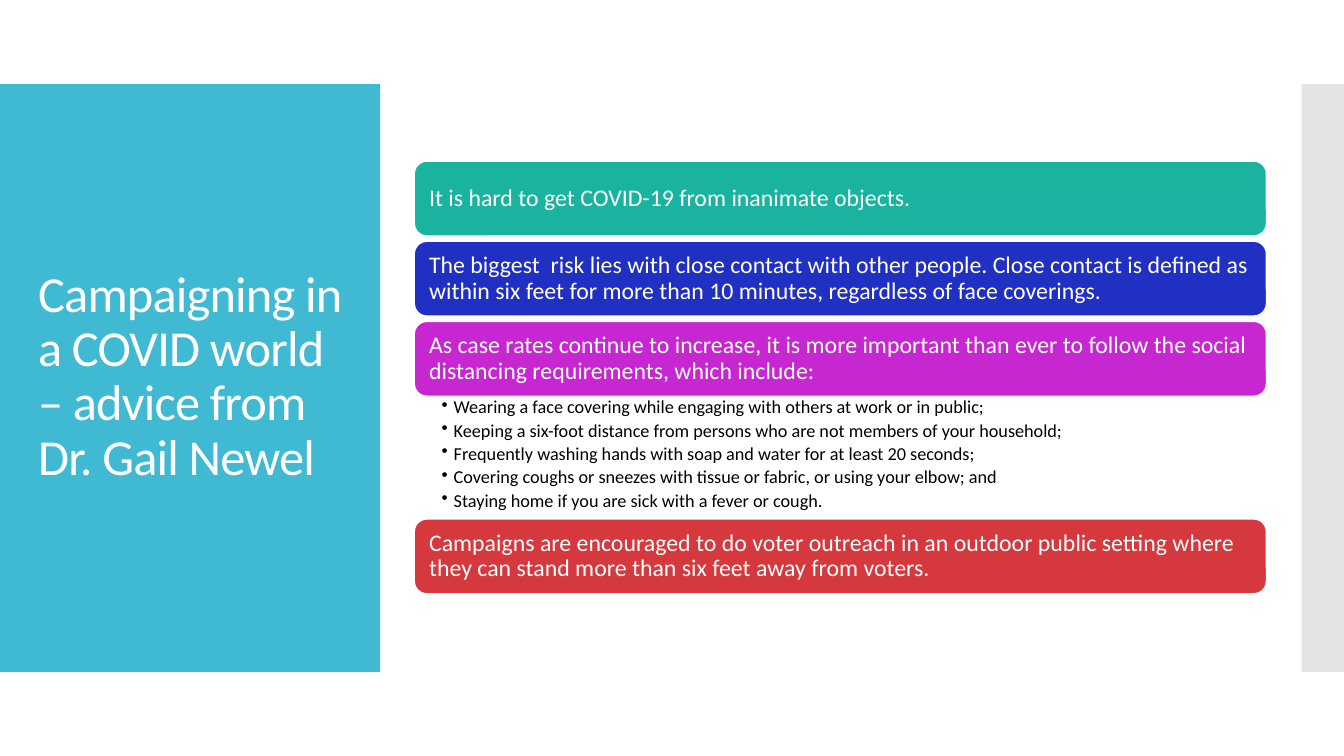
from dataclasses import dataclass

from lxml import etree
from pptx import Presentation
from pptx import util as u
from pptx.dml.color import RGBColor
from pptx.enum import shapes, text
from pptx.oxml.ns import qn

TITLE = "Campaigning in a COVID world – advice from \vDr. Gail Newel"
# Each card: fill, statement, bullets below it
CARDS = [
    ("1AB39F", "It is hard to get COVID-19 from inanimate objects.", []),
    ("2030C2", "The biggest  risk lies with close contact with other people. "
     "Close contact is defined as within six feet for more than 10 minutes, "
     "regardless of face coverings.", []),
    ("C727D1", "As case rates continue to increase, it is more important than ever "
     "to follow the social distancing requirements, which include:", [
         "Wearing a face covering while engaging with others at work or in public;",
         "Keeping a six-foot distance from persons who are not members of your household;",
         "Frequently washing hands with soap and water for at least 20 seconds;",
         "Covering coughs or sneezes with tissue or fabric, or using your elbow; and",
         "Staying home if you are sick with a fever or cough.",
     ]),
    ("D5393D", "Campaigns are encouraged to do voter outreach in an outdoor public "
     "setting where they can stand more than six feet away from voters.", []),
]


@dataclass(frozen=True)
class Theme:
    font: str = "Calibri"
    panel: str = "40BAD2"
    strip: str = "C8C8C8"
    light: str = "FFFFFF"
    dark: str = "000000"
    title: float = 36
    card: float = 17
    bullet: float = 13


THEME = Theme()
WIDTH, HEIGHT = 13.33, 7.5
BAND_TOP, BAND_HEIGHT = HEIGHT / 9, HEIGHT * 7 / 9
PANEL_WIDTH, STRIP_WIDTH = 3.77, 0.42
CARD_LEFT, CARD_TOP, CARD_WIDTH, CARD_HEIGHT = 4.11, 1.6, 8.45, 0.74
GAP, LIST_HEIGHT, HANGING = 0.055, 1.22, 0.12


def inches(*lengths):
    return [u.Inches(length) for length in lengths]


def add_block(page, kind, place, fill, line=None):
    block = page.shapes.add_shape(kind, *inches(*place))
    block.shadow.inherit = False
    block.fill.solid()
    block.fill.fore_color.rgb = RGBColor.from_string(fill)
    if line:
        block.line.color.rgb = RGBColor.from_string(line)
        block.line.width = u.Pt(0.85)
    else:
        block.line.fill.background()
    return block


def write(box, lines, *, size, color, insets, middle=True, bullets=False,
          after=0, tracking=None):
    frame = box.text_frame
    frame.word_wrap = True
    frame.vertical_anchor = (text.MSO_ANCHOR.MIDDLE if middle
                             else text.MSO_ANCHOR.TOP)
    (frame.margin_left, frame.margin_top,
     frame.margin_right, frame.margin_bottom) = inches(*insets)
    frame.text = "\n".join(lines)
    for para in frame.paragraphs:
        para.alignment = text.PP_ALIGN.LEFT
        para.line_spacing = 0.9
        para.space_after = u.Pt(after)
        if bullets:
            props = para._p.get_or_add_pPr()
            props.set("marL", str(u.Inches(HANGING)))
            props.set("indent", str(-u.Inches(HANGING)))
            etree.SubElement(props, qn("a:buChar")).set("char", "•")
        for span in para.runs:
            span.font.name = THEME.font
            span.font.size = u.Pt(size)
            span.font.color.rgb = RGBColor.from_string(color)
            if tracking:
                span.font._element.set("spc", str(tracking))


def add_frame(page):
    """Side panel with the title, and the translucent strip at the right."""
    rectangle = shapes.MSO_SHAPE.RECTANGLE
    add_block(page, rectangle, (0, BAND_TOP, PANEL_WIDTH, BAND_HEIGHT), THEME.panel)
    strip = add_block(page, rectangle, (WIDTH - STRIP_WIDTH, BAND_TOP,
                                        STRIP_WIDTH, BAND_HEIGHT), THEME.strip)
    color = strip._element.spPr.find(qn("a:solidFill"))[0]
    etree.SubElement(color, qn("a:alpha")).set("val", "50000")
    title = page.shapes.add_textbox(*inches(0.28, 1.23, 3.22, 5.03))
    write(title, [TITLE], size=THEME.title, color=THEME.light,
          insets=(0.1, 0.05, 0.1, 0.05), tracking=-60)


def add_cards(page):
    top = CARD_TOP
    for fill, statement, points in CARDS:
        card = add_block(page, shapes.MSO_SHAPE.ROUNDED_RECTANGLE,
                         (CARD_LEFT, top, CARD_WIDTH, CARD_HEIGHT), fill, THEME.light)
        write(card, [statement], size=THEME.card, color=THEME.light,
              insets=(0.11, 0.1, 0.11, 0.1))
        top += CARD_HEIGHT
        if points:
            box = page.shapes.add_textbox(*inches(CARD_LEFT, top, CARD_WIDTH, LIST_HEIGHT))
            write(box, points, size=THEME.bullet, color=THEME.dark, middle=False,
                  insets=(0.27, 0.02, 0.13, 0.02), bullets=True, after=2.6)
            top += LIST_HEIGHT
        else:
            top += GAP


def main():
    deck = Presentation()
    deck.slide_width, deck.slide_height = inches(WIDTH, HEIGHT)
    page = deck.slides.add_slide(deck.slide_layouts[6])
    add_frame(page)
    add_cards(page)
    deck.save("out.pptx")


if __name__ == "__main__":
    main()
